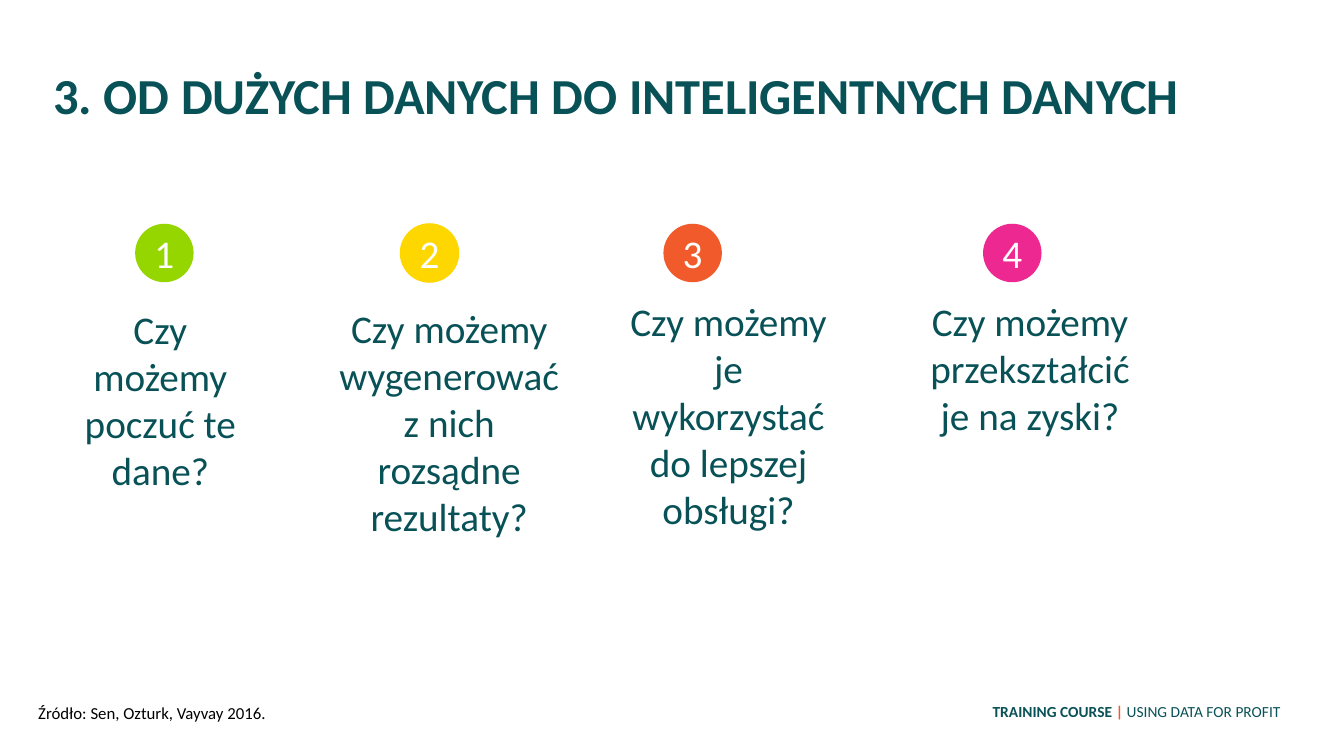
from pptx import Presentation
from pptx.dml.color import RGBColor
from pptx.enum.shapes import MSO_SHAPE
from pptx.enum.text import MSO_ANCHOR, PP_ALIGN
from pptx.util import Inches, Pt

TEAL, ORANGE, WHITE, BLACK = "085156", "F15A2A", "FFFFFF", "000000"


def color(value):
    """Turn a hex string into a colour."""
    return RGBColor.from_string(value)


class SlideBuilder:
    """Holds the style and the current slide."""

    font = "Calibri"

    def __init__(self, page):
        """Keep the slide to build on."""
        self.page = page

    def style(self, span, size, ink, bold=False):
        """Format one run."""
        span.font.name = self.font
        span.font.size = Pt(size)
        span.font.bold = bold
        span.font.color.rgb = color(ink)

    def title(self, place, text):
        """Move and format the title placeholder."""
        box = self.page.shapes.title
        box.left, box.top, box.width, box.height = map(Inches, place)
        box.fill.solid()
        box.fill.fore_color.rgb = color(WHITE)
        frame = box.text_frame
        frame.text = text
        frame.word_wrap = True
        frame.vertical_anchor = MSO_ANCHOR.TOP
        para = frame.paragraphs[0]
        para.alignment = PP_ALIGN.LEFT
        para.line_spacing = 1.7
        para.space_before = Pt(10)
        self.style(para.runs[0], 36, TEAL, True)

    def text(self, place, spans, size, align):
        """Add a text box from (text, colour, bold) spans."""
        box = self.page.shapes.add_textbox(*map(Inches, place))
        box.text_frame.word_wrap = True
        para = box.text_frame.paragraphs[0]
        para.alignment = align
        for words, ink, bold in spans:
            span = para.add_run()
            span.text = words
            self.style(span, size, ink, bold)
        return para

    def badge(self, left, number, fill):
        """Add a numbered circle."""
        place = map(Inches, (left, 2.22, 0.58, 0.58))
        circle = self.page.shapes.add_shape(MSO_SHAPE.OVAL, *place)
        circle.shadow.inherit = False
        circle.fill.solid()
        circle.fill.fore_color.rgb = color(fill)
        circle.line.fill.background()
        frame = circle.text_frame
        frame.text = str(number)
        frame.vertical_anchor = MSO_ANCHOR.MIDDLE
        frame.paragraphs[0].alignment = PP_ALIGN.CENTER
        self.style(frame.paragraphs[0].runs[0], 28, WHITE)
        return circle


def main():
    """Build and save the slide."""
    deck = Presentation()
    deck.slide_width, deck.slide_height = Inches(13.33), Inches(7.5)
    builder = SlideBuilder(deck.slides.add_slide(deck.slide_layouts[5]))
    builder.title((0.43, 0.17, 11.94, 0.94), "3. OD DUŻYCH DANYCH DO INTELIGENTNYCH DANYCH")

    questions = [
        (1.34, "95D600", (0.73, 2.98, 1.72, 1.99), "Czy możemy poczuć te dane?"),
        (3.97, "FFD700", (3.26, 2.97, 2.39, 2.46), "Czy możemy wygenerować z nich rozsądne rezultaty?"),
        (6.58, ORANGE, (6.15, 2.9, 2.15, 2.46), "Czy możemy je wykorzystać do lepszej obsługi?"),
        (9.75, "ED2891", (9.07, 2.9, 2.29, 1.51), "Czy możemy przekształcić je na zyski?"),
    ]
    for number, (left, fill, place, question) in enumerate(questions, 1):
        circle = builder.badge(left, number, fill)
        if number == 2:
            circle.line.color.rgb = color(fill)
            circle.line.width = Pt(0.75)
        builder.text(place, [(question, TEAL, False)], 28, PP_ALIGN.CENTER)

    source = [("Źródło: Sen, Ozturk, Vayvay 2016.", BLACK, False)]
    builder.text((0.28, 6.92, 4.91, 0.3), source, 12, PP_ALIGN.LEFT)
    footer = [
        ("TRAINING COURSE ", TEAL, True),
        ("| ", ORANGE, True),
        ("USING DATA FOR PROFIT", TEAL, False),
    ]
    para = builder.text((0.72, 6.92, 12.08, 0.45), footer, 11, PP_ALIGN.RIGHT)
    para.space_before = Pt(2.2)
    deck.save("out.pptx")


if __name__ == "__main__":
    main()
